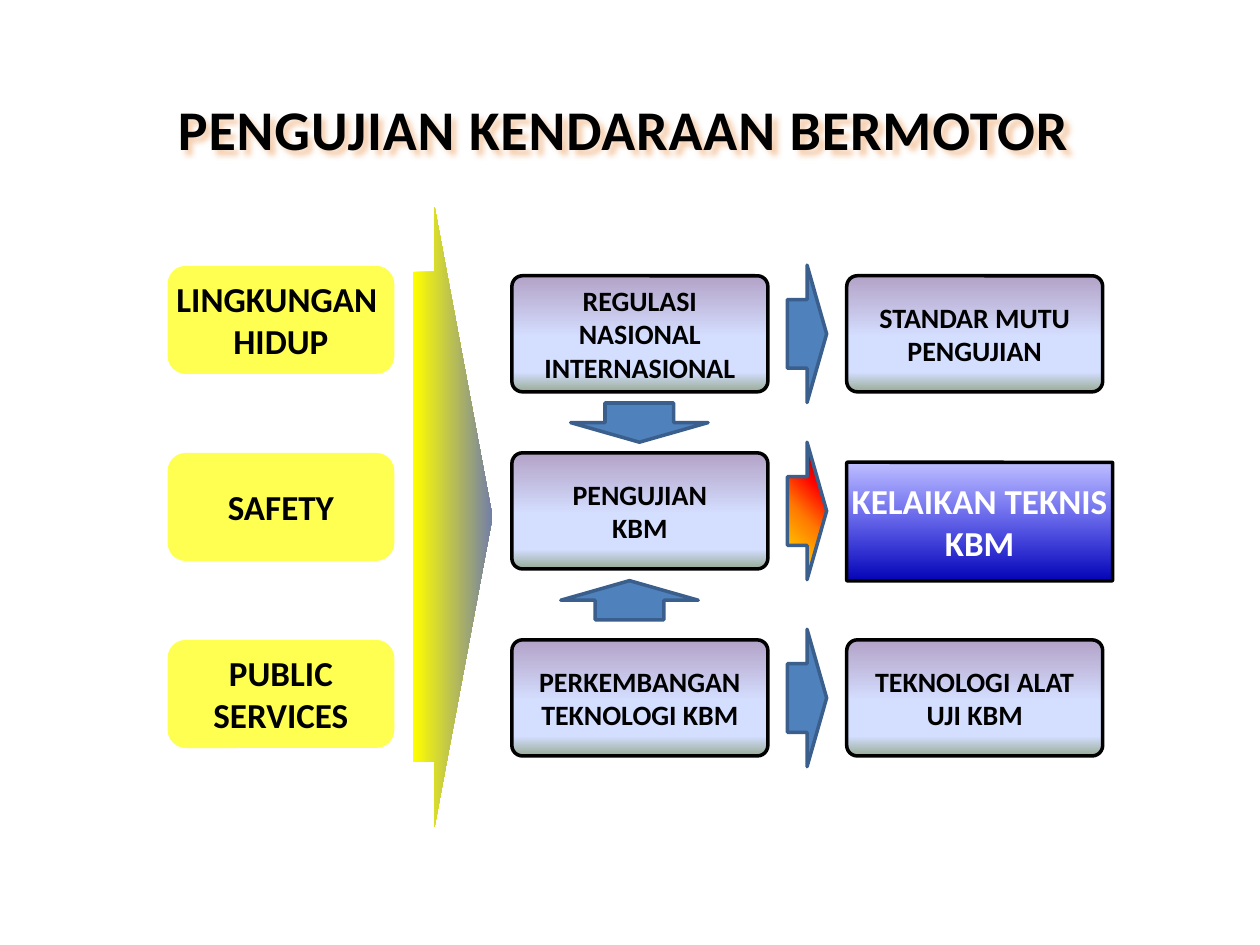
from dataclasses import dataclass
from typing import Optional, Union

from lxml.etree import SubElement
from pptx import Presentation
from pptx.dml.color import RGBColor
from pptx.enum.shapes import MSO_SHAPE as Preset
from pptx.enum.text import MSO_ANCHOR as Anchor, MSO_AUTO_SIZE as AutoSize, PP_ALIGN as Align
from pptx.oxml.ns import qn
from pptx.util import Cm, Pt

FONT = "Calibri"
BLACK = RGBColor(0x00, 0x00, 0x00)
WHITE = RGBColor(0xFF, 0xFF, 0xFF)
YELLOW = RGBColor(0xFF, 0xFF, 0x00)
SLATE = RGBColor(0x72, 0x7E, 0xA8)
BLUE = RGBColor(0x00, 0x00, 0xFF)
NAVY = RGBColor(0x00, 0x00, 0xB6)
LILAC = RGBColor(0xB3, 0xA2, 0xC7)
PALE_BLUE = RGBColor(0xD4, 0xDE, 0xFF)
SAGE = RGBColor(0x96, 0xAB, 0x94)
STEEL = RGBColor(0x4F, 0x81, 0xBD)
STEEL_EDGE = RGBColor(0x3A, 0x5F, 0x8C)
LEMON = RGBColor(0xFF, 0xF2, 0x00)
ORANGE = RGBColor(0xFF, 0x7A, 0x00)
RED = RGBColor(0xFF, 0x03, 0x00)
MAROON = RGBColor(0x4D, 0x08, 0x08)
TITLE_GLOW = RGBColor(0xE7, 0x87, 0x38)


@dataclass(frozen=True)
class Stop:
    percent: int
    color: RGBColor
    alpha: int = 100


@dataclass(frozen=True)
class Gradient:
    angle: int
    stops: tuple[Stop, ...]


@dataclass(frozen=True)
class Solid:
    color: RGBColor
    alpha: int = 100


@dataclass(frozen=True)
class BoxStyle:
    fill: Union[Solid, Gradient]
    corner: float
    size: int
    text_color: RGBColor = BLACK
    line: Optional[RGBColor] = None


@dataclass(frozen=True)
class Box:
    left: float
    top: float
    width: float
    height: float
    lines: tuple[str, ...]
    style: BoxStyle


@dataclass(frozen=True)
class Arrow:
    center_x: float
    center_y: float
    rotation: int
    fill: Union[Solid, Gradient] = Solid(STEEL)


CARD_FILL = Gradient(90, (Stop(0, LILAC), Stop(53, PALE_BLUE), Stop(83, PALE_BLUE), Stop(100, SAGE)))
FIRE = Gradient(45, (Stop(0, LEMON), Stop(45, ORANGE), Stop(70, RED), Stop(100, MAROON)))
FUNNEL_FILL = Gradient(0, (Stop(0, YELLOW), Stop(100, SLATE)))
RESULT_FILL = Gradient(90, (Stop(0, BLUE, 25), Stop(100, NAVY)))

DRIVER = BoxStyle(Solid(YELLOW, 68), 0.167, 20)
CARD = BoxStyle(CARD_FILL, 0.091, 16, line=BLACK)
RESULT = BoxStyle(RESULT_FILL, 0.007, 20, WHITE, BLACK)

# Grid in centimetres
DRIVER_LEFT, DRIVER_TOP, DRIVER_STEP = 3.38, 5.36, 3.77
DRIVER_SIZE = (4.57, 2.18)
CARD_SIZE = (5.16, 2.34)
CARD_TOPS = (5.56, 9.13, 12.9)
MIDDLE_LEFT, RIGHT_LEFT = 10.32, 17.07
ARROW_WIDTH, ARROW_HEIGHT = 2.77, 0.79
ARROW_X = 16.27

DRIVERS = (("LINGKUNGAN ", "HIDUP"), ("SAFETY",), ("PUBLIC", "SERVICES"))
PROCESSES = (
    ("REGULASI", "NASIONAL", "INTERNASIONAL"),
    ("PENGUJIAN", "KBM"),
    ("PERKEMBANGAN", "TEKNOLOGI KBM"),
)
BOXES = (
    [Box(DRIVER_LEFT, DRIVER_TOP + row * DRIVER_STEP, *DRIVER_SIZE, lines, DRIVER)
     for row, lines in enumerate(DRIVERS)]
    + [Box(MIDDLE_LEFT, top, *CARD_SIZE, lines, CARD) for top, lines in zip(CARD_TOPS, PROCESSES)]
    + [
        Box(RIGHT_LEFT, CARD_TOPS[0], *CARD_SIZE, ("STANDAR MUTU", "PENGUJIAN"), CARD),
        Box(RIGHT_LEFT, 9.32, 5.36, 2.39, ("KELAIKAN TEKNIS", "KBM"), RESULT),
        Box(RIGHT_LEFT, CARD_TOPS[2], *CARD_SIZE, ("TEKNOLOGI ALAT", "UJI KBM"), CARD),
    ]
)
ARROWS = [Arrow(12.89, 8.52, 0), Arrow(12.69, 12.1, 180)] + [
    Arrow(ARROW_X, top + CARD_SIZE[1] / 2, 270, fill)
    for top, fill in zip(CARD_TOPS, (Solid(STEEL), FIRE, Solid(STEEL)))
]


def add_color(parent, color: RGBColor, alpha: int = 100) -> None:
    element = SubElement(parent, qn("a:srgbClr"), val=str(color))
    if alpha < 100:
        SubElement(element, qn("a:alpha"), val=str(alpha * 1000))


def paint(shape, fill: Union[Solid, Gradient], line: Optional[RGBColor] = None) -> None:
    shape.shadow.inherit = False
    properties = shape._element.spPr
    if isinstance(fill, Gradient):
        shape.fill.gradient()
        shape.fill.gradient_angle = (360 - fill.angle) % 360
        stop_list = properties.find(".//" + qn("a:gsLst"))
        for old_stop in list(stop_list):
            stop_list.remove(old_stop)
        for stop in fill.stops:
            element = SubElement(stop_list, qn("a:gs"), pos=str(stop.percent * 1000))
            add_color(element, stop.color, stop.alpha)
    else:
        shape.fill.solid()
        shape.fill.fore_color.rgb = fill.color
        if fill.alpha < 100:
            color = properties.find(qn("a:solidFill")).find(qn("a:srgbClr"))
            SubElement(color, qn("a:alpha"), val=str(fill.alpha * 1000))
    if line is None:
        shape.line.fill.background()
    else:
        shape.line.color.rgb = line
        shape.line.width = Pt(2)


def write_run(paragraph, text: str, size: int, color: RGBColor):
    paragraph.alignment = Align.CENTER
    run = paragraph.add_run()
    run.text = text
    run.font.name, run.font.size, run.font.bold = FONT, Pt(size), True
    run.font.color.rgb = color
    return run


def draw_box(slide, box: Box) -> None:
    shape = slide.shapes.add_shape(
        Preset.ROUNDED_RECTANGLE, Cm(box.left), Cm(box.top), Cm(box.width), Cm(box.height))
    shape.adjustments[0] = box.style.corner
    paint(shape, box.style.fill, box.style.line)
    frame = shape.text_frame
    frame.word_wrap = False
    frame.vertical_anchor = Anchor.MIDDLE
    for index, line in enumerate(box.lines):
        paragraph = frame.add_paragraph() if index else frame.paragraphs[0]
        write_run(paragraph, line, box.style.size, box.style.text_color)


def draw_arrow(slide, arrow: Arrow) -> None:
    shape = slide.shapes.add_shape(
        Preset.DOWN_ARROW, Cm(arrow.center_x - ARROW_WIDTH / 2),
        Cm(arrow.center_y - ARROW_HEIGHT / 2), Cm(ARROW_WIDTH), Cm(ARROW_HEIGHT))
    shape.rotation = arrow.rotation
    paint(shape, arrow.fill, STEEL_EDGE)


def draw_funnel(slide) -> None:
    shape = slide.shapes.add_shape(Preset.RIGHT_ARROW, Cm(8.33), Cm(4.17), Cm(1.6), Cm(12.5))
    shape.adjustments[0], shape.adjustments[1] = 0.79, 0.73
    paint(shape, FUNNEL_FILL)


def write_title(slide) -> None:
    title = slide.shapes.title
    title.left, title.top, title.width, title.height = Cm(0), Cm(1.78), Cm(25.4), Cm(1.62)
    frame = title.text_frame
    frame.word_wrap = True
    frame.auto_size = AutoSize.SHAPE_TO_FIT_TEXT
    frame.vertical_anchor = Anchor.TOP
    run = write_run(frame.paragraphs[0], "PENGUJIAN KENDARAAN BERMOTOR ", 32, BLACK)
    run.font._element.set("spc", "50")
    # Soft orange shadow behind the letters
    effects = SubElement(title._element.spPr, qn("a:effectLst"))
    shadow = SubElement(effects, qn("a:outerShdw"), blurRad=str(Pt(3)), dist=str(Pt(3)),
                        dir="2700000", algn="tl", rotWithShape="0")
    add_color(shadow, TITLE_GLOW, 40)


def main() -> None:
    presentation = Presentation()
    presentation.slide_width, presentation.slide_height = Cm(25.4), Cm(19.05)
    slide = presentation.slides.add_slide(presentation.slide_layouts[5])
    write_title(slide)
    draw_funnel(slide)
    for box in BOXES:
        draw_box(slide, box)
    for arrow in ARROWS:
        draw_arrow(slide, arrow)
    presentation.save("out.pptx")


if __name__ == "__main__":
    main()
